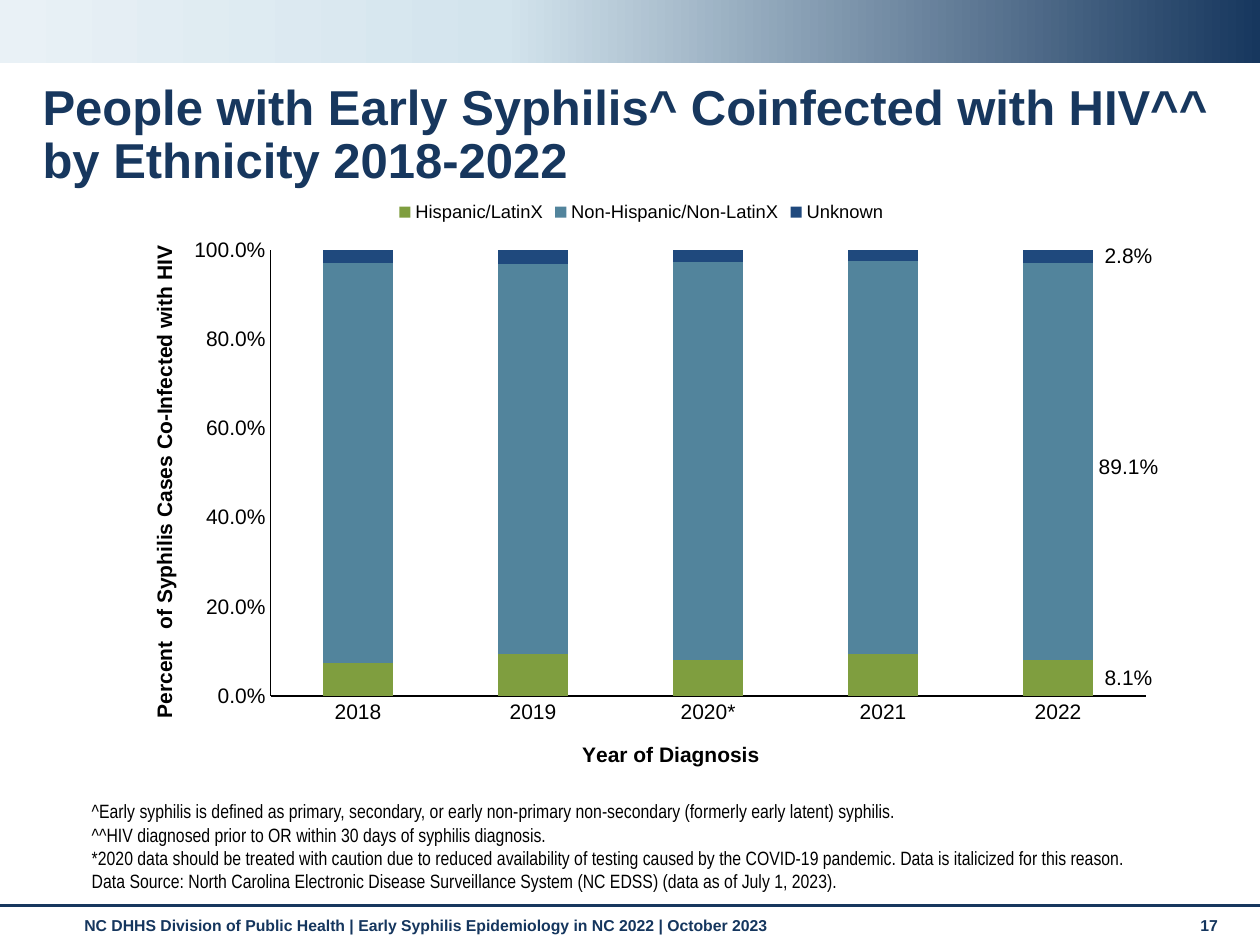
from copy import deepcopy

from lxml.etree import SubElement
from pptx import Presentation
from pptx.chart.data import CategoryChartData
from pptx.dml.color import RGBColor
from pptx.enum.chart import XL_CHART_TYPE, XL_LEGEND_POSITION, XL_TICK_MARK
from pptx.enum.shapes import MSO_CONNECTOR, MSO_SHAPE
from pptx.enum.text import MSO_ANCHOR
from pptx.oxml import parse_xml
from pptx.oxml.ns import nsdecls, qn
from pptx.util import Cm, Pt

NAVY, BLACK = "17375E", "000000"
YEARS = ["2018", "2019", "2020*", "2021", "2022"]
# name, colour, shares by year, vertical shift of the last label
SERIES = [
    ("Hispanic/LatinX", "7F9E3F", (0.074, 0.095, 0.081, 0.094, 0.081), 0),
    ("Non-Hispanic/Non-LatinX", "52849C", (0.897, 0.875, 0.892, 0.883, 0.891), 0.01),
    ("Unknown", "1F497D", (0.029, 0.03, 0.027, 0.023, 0.028), 0),
]
NOTES = [
    "^Early syphilis is defined as primary, secondary, or early non-primary "
    "non-secondary (formerly early latent) syphilis.",
    "^^HIV diagnosed prior to OR within 30 days of syphilis diagnosis.",
    "*2020 data should be treated with caution due to reduced availability of testing "
    "caused by the COVID-19 pandemic. Data is italicized for this reason.",
    "Data Source: North Carolina Electronic Disease Surveillance System (NC EDSS) "
    "(data as of July 1, 2023).",
]


def rgb(value):
    return RGBColor.from_string(value)


def set_layout(parent, index, **values):
    """Give a chart element a manual layout, as fractions of the chart."""
    for old in parent.findall(qn("c:layout")):
        parent.remove(old)
    layout = parse_xml(f"<c:layout {nsdecls('c')}><c:manualLayout/></c:layout>")
    for key, value in values.items():
        SubElement(layout[0], qn(f"c:{key}")).set("val", str(value))
    parent.insert(index, layout)


class Deck:
    """Holds the text style and the current slide."""

    def __init__(self, slide, font="Arial", color=NAVY):
        self.s, self.font, self.color = slide, font, color

    def style(self, font, size, bold=False, color=BLACK, name=None):
        font.name, font.size, font.bold = name or self.font, Pt(size), bold
        font.color.rgb = rgb(color)

    def text(self, box, lines, size, bold=True, color=None, name=None,
             anchor=MSO_ANCHOR.TOP, spacing=None):
        tf = self.s.shapes.add_textbox(*map(Cm, box)).text_frame
        tf.word_wrap, tf.vertical_anchor = True, anchor
        for i, line in enumerate(lines):
            p = tf.add_paragraph() if i else tf.paragraphs[0]
            p.line_spacing = spacing
            r = p.add_run()
            r.text = line
            self.style(r.font, size, bold, color or self.color, name)

    def band(self, box, stops):
        sp = self.s.shapes.add_shape(MSO_SHAPE.RECTANGLE, *map(Cm, box))
        sp.shadow.inherit = False
        sp.line.fill.background()
        sp.fill.gradient()
        sp.fill.gradient_angle = 180
        gs_list = sp.fill._fill._gradFill.gsLst
        gs_list.append(deepcopy(gs_list[0]))
        for stop, (position, color) in zip(sp.fill.gradient_stops, stops):
            stop.position, stop.color.rgb = position, rgb(color)

    def line(self, ends, width):
        cxn = self.s.shapes.add_connector(MSO_CONNECTOR.STRAIGHT, *map(Cm, ends))
        cxn.line.color.rgb, cxn.line.width = rgb(self.color), Pt(width)
        SubElement(cxn._element.spPr, qn("a:effectLst"))

    def axis(self, axis, title, x, y, rotation=0):
        axis.has_major_gridlines = False
        axis.major_tick_mark = axis.minor_tick_mark = XL_TICK_MARK.NONE
        self.style(axis.tick_labels.font, 12)
        axis.format.line.color.rgb, axis.format.line.width = rgb(BLACK), Pt(0.75)
        tf = axis.axis_title.text_frame
        r = tf.paragraphs[0].add_run()
        r.text = title
        self.style(r.font, 12, True)
        tf._txBody.bodyPr.set("rot", str(rotation * 60000))
        set_layout(axis.axis_title._element, 1, xMode="edge", yMode="edge", x=x, y=y)

    def stacked_columns(self, box):
        data = CategoryChartData(number_format="0.0%")
        data.categories = YEARS
        for name, _, values, _ in SERIES:
            data.add_series(name, values)
        chart = self.s.shapes.add_chart(
            XL_CHART_TYPE.COLUMN_STACKED, *map(Cm, box), data).chart
        self.style(chart.font, 10)
        chart.has_title = False
        chart.has_legend = True
        chart.legend.position = XL_LEGEND_POSITION.TOP
        chart.legend.include_in_layout = False
        self.style(chart.legend.font, 10.5)
        self.axis(chart.category_axis, "Year of Diagnosis", 0.44, 0.91)
        value_axis = chart.value_axis
        self.axis(value_axis, "Percent  of Syphilis Cases Co-Infected with HIV",
                  0.03, 0.09, -90)
        value_axis.minimum_scale, value_axis.maximum_scale = 0, 1
        value_axis.major_unit = 0.2
        value_axis.tick_labels.number_format = "0.0%"
        value_axis.tick_labels.number_format_is_linked = False
        plot = chart.plots[0]
        plot.gap_width, plot.overlap, plot.vary_by_categories = 150, 100, False
        set_layout(chart._chartSpace.chart.plotArea, 0, layoutTarget="inner",
                   xMode="edge", yMode="edge", x=0.147, y=0.104, w=0.833, h=0.737)
        for series, (_, color, _, shift) in zip(plot.series, SERIES):
            series.format.fill.solid()
            series.format.fill.fore_color.rgb = rgb(color)
            self.last_label(series, shift)

    def last_label(self, series, shift):
        """Label only the last column, to the right of the bar."""
        labels = series.data_labels
        labels.show_value = False
        labels.number_format, labels.number_format_is_linked = "0.0%", False
        self.style(labels.font, 12)
        self.style(series.points[len(YEARS) - 1].data_label.font, 12)
        element = labels._element
        for leader in element.findall(qn("c:showLeaderLines")):
            leader.set("val", "0")
        set_layout(element.find(qn("c:dLbl")), 1, x=0.067, y=shift)


def main():
    prs = Presentation()
    prs.slide_width, prs.slide_height = Cm(25.4), Cm(19.05)
    deck = Deck(prs.slides.add_slide(prs.slide_layouts[6]))
    deck.band((0, 0, 25.4, 1.27), [(0, NAVY), (0.6, "D3E4ED"), (1, "E9F1F6")])
    deck.line((0, 18.26, 25.4, 18.26), 1.75)
    deck.text((1.45, 18.34, 22.2, 0.74), [
        "NC DHHS Division of Public Health | Early Syphilis Epidemiology in NC 2022 "
        "| October 2023"], 9, color="15365E")
    deck.text((23.95, 18.34, 1.12, 0.76), ["17"], 9, color="15365E")
    deck.text((0.61, 1.55, 24.64, 1.52), [
        "People with Early Syphilis^ Coinfected with HIV^^ by Ethnicity 2018-2022"],
        28, spacing=0.9)
    deck.stacked_columns((2.34, 3.78, 21.18, 12.19))
    deck.text((1.6, 16.51, 22.2, 1.6), NOTES, 11, False, BLACK, "Arial Narrow",
              MSO_ANCHOR.BOTTOM)
    prs.save("out.pptx")


if __name__ == "__main__":
    main()
